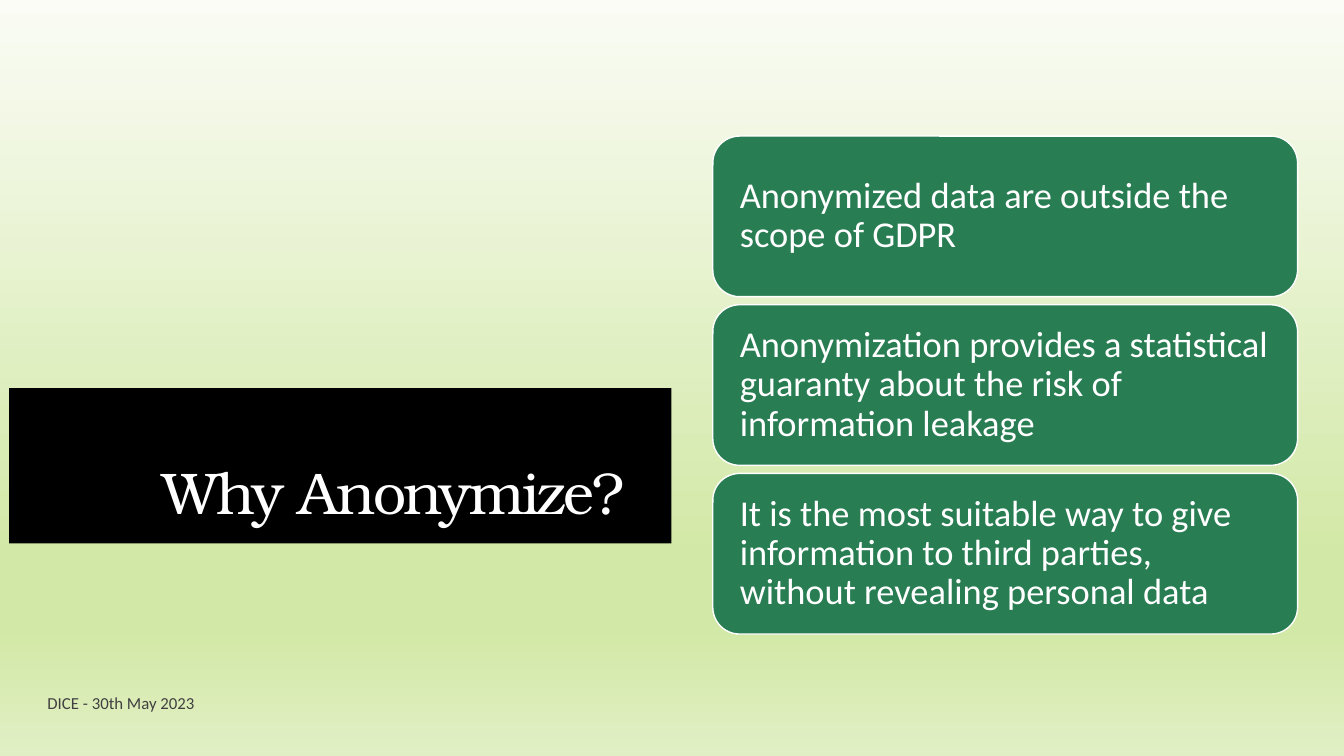
from copy import deepcopy
from dataclasses import dataclass

from pptx import Presentation
from pptx.dml.color import RGBColor
from pptx.enum.shapes import MSO_SHAPE
from pptx.enum.text import MSO_ANCHOR, MSO_AUTO_SIZE, PP_ALIGN
from pptx.oxml.ns import qn
from pptx.util import Inches, Pt

ROUNDED = MSO_SHAPE.ROUNDED_RECTANGLE
MIDDLE, BOTTOM = MSO_ANCHOR.MIDDLE, MSO_ANCHOR.BOTTOM
LEFT, RIGHT = PP_ALIGN.LEFT, PP_ALIGN.RIGHT
NO_AUTOFIT = MSO_AUTO_SIZE.NONE
TITLE_ONLY = 5


@dataclass(frozen=True)
class Theme:
    white: str = "FFFFFF"
    black: str = "000000"
    green: str = "297D53"
    grey: str = "404040"
    gradient: tuple = ((0, "FAFCF5"), (0.74, "D2E8A6"), (0.83, "D2E8A6"), (1, "E1EFC4"))
    title_font: str = "TeX Gyre Bonum"
    body_font: str = "Calibri"
    title_size: int = 42
    card_size: int = 26
    footer_size: int = 12


THEME = Theme()

REASONS = (
    "Anonymized data are outside the scope of GDPR",
    "Anonymization provides a statistical guaranty about the risk of information leakage",
    "It is the most suitable way to give information to third parties, without revealing personal data",
)


def apply(target, formats):
    for name, value in formats.items():
        setattr(target, name, value)


def fill_solid(shape, color):
    shape.fill.solid()
    shape.fill.fore_color.rgb = RGBColor.from_string(color)


def write_text(shape, text, font, size, color, insets, anchor=MIDDLE, align=LEFT, spacing=1.0):
    frame = shape.text_frame
    left, top, right, bottom = map(Inches, insets)
    apply(frame, {
        "word_wrap": True, "auto_size": NO_AUTOFIT, "vertical_anchor": anchor,
        "margin_left": left, "margin_top": top, "margin_right": right, "margin_bottom": bottom,
    })
    paragraph = frame.paragraphs[0]
    apply(paragraph, {"alignment": align, "line_spacing": spacing})
    run = paragraph.add_run()
    run.text = text
    apply(run.font, {"name": font, "size": Pt(size)})
    run.font.color.rgb = RGBColor.from_string(color)
    return run


def paint_background(slide):
    fill = slide.background.fill
    fill.gradient()
    fill.gradient_angle = 270
    stop_list = slide.element.find(".//" + qn("a:gsLst"))
    while len(stop_list) < len(THEME.gradient):
        stop_list.append(deepcopy(stop_list[0]))
    for stop, (position, color) in zip(fill.gradient_stops, THEME.gradient):
        stop.position = position
        stop.color.rgb = RGBColor.from_string(color)


def add_title(slide, text, left, top, width, height):
    title = slide.shapes.title
    apply(title, {"left": Inches(left), "top": Inches(top),
                  "width": Inches(width), "height": Inches(height)})
    fill_solid(title, THEME.black)
    run = write_text(title, text, THEME.title_font, THEME.title_size, THEME.white,
                     (0.31, 0, 0.47, 0.16), BOTTOM, RIGHT, 0.9)
    run.font._element.set("spc", "-150")


def add_cards(slide, texts, left, top, width, height, gap=0.08):
    card_height = (height - gap * (len(texts) - 1)) / len(texts)
    for index, text in enumerate(texts):
        card_top = top + index * (card_height + gap)
        card = slide.shapes.add_shape(ROUNDED, Inches(left), Inches(card_top),
                                      Inches(width), Inches(card_height))
        card.shadow.inherit = False
        fill_solid(card, THEME.green)
        card.line.color.rgb = RGBColor.from_string(THEME.white)
        card.line.width = Pt(1)
        write_text(card, text, THEME.body_font, THEME.card_size, THEME.white,
                   (0.19, 0.19, 0.19, 0.19), spacing=0.9)


def add_footer(slide, text, left, top, width, height):
    footer = slide.shapes.add_textbox(Inches(left), Inches(top), Inches(width), Inches(height))
    write_text(footer, text, THEME.body_font, THEME.footer_size, THEME.grey, (0, 0, 0, 0))


def main():
    presentation = Presentation()
    apply(presentation, {"slide_width": Inches(13.33), "slide_height": Inches(7.5)})
    slide = presentation.slides.add_slide(presentation.slide_layouts[TITLE_ONLY])
    paint_background(slide)
    add_title(slide, "Why Anonymize?", 0.09, 3.85, 6.57, 1.54)
    add_cards(slide, REASONS, 7.07, 1.35, 5.8, 4.94)
    add_footer(slide, "DICE - 30th May 2023", 0.47, 6.77, 9.61, 0.4)
    presentation.save("out.pptx")


if __name__ == "__main__":
    main()
